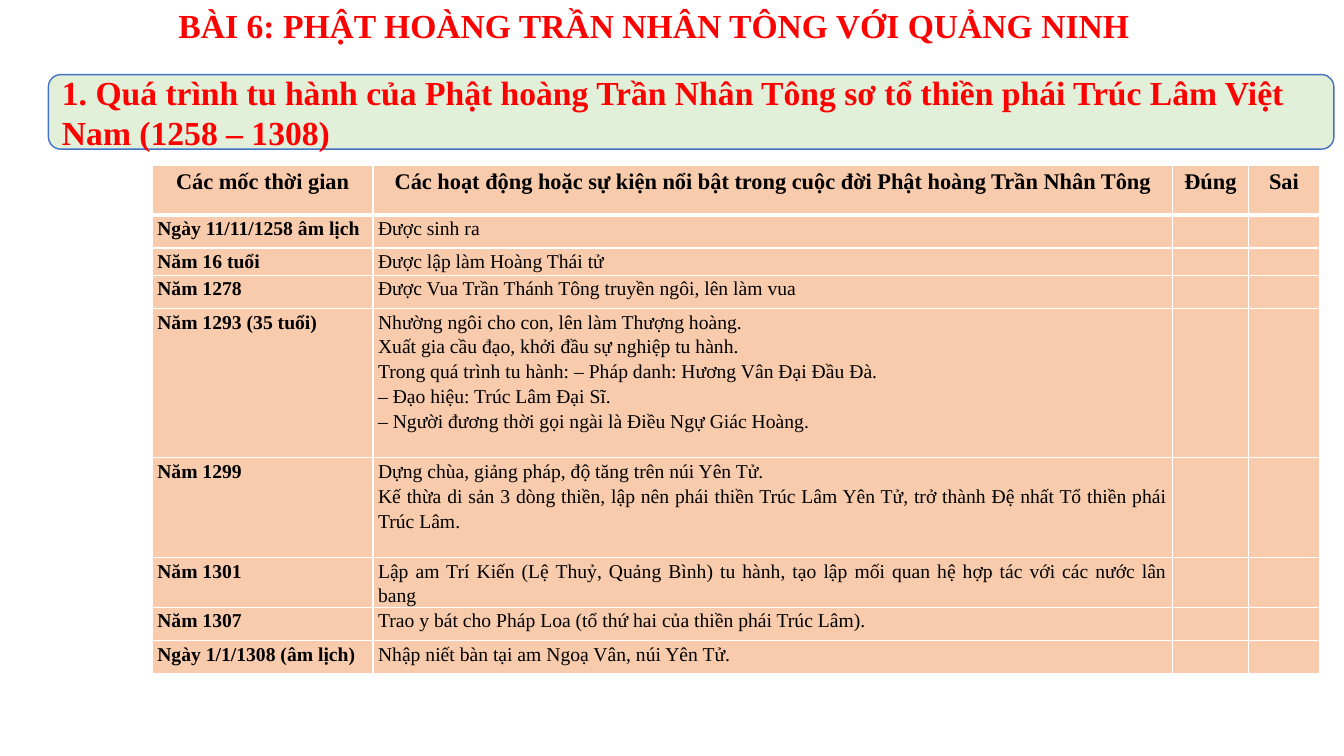
from dataclasses import dataclass

from lxml.etree import SubElement
from pptx import Presentation
from pptx.dml.color import RGBColor
from pptx.enum.shapes import MSO_SHAPE
from pptx.enum.text import MSO_ANCHOR, MSO_AUTO_SIZE, PP_ALIGN
from pptx.oxml.ns import qn
from pptx.util import Inches, Pt


@dataclass(frozen=True)
class Theme:
    """Colours, typeface and type sizes of the slide."""
    font: str = "Times New Roman"
    red: str = "FF0000"
    black: str = "000000"
    white: str = "FFFFFF"
    green: str = "E2F0D9"
    blue: str = "4472C4"
    peach: str = "F8CBAD"
    title: int = 24
    header: int = 16
    body: int = 14
    line_spacing: float = 1.15


THEME = Theme()
TITLE = "BÀI 6: PHẬT HOÀNG TRẦN NHÂN TÔNG VỚI QUẢNG NINH"
SECTION = ("1. Quá trình tu hành của Phật hoàng Trần Nhân Tông "
           "sơ tổ thiền phái Trúc Lâm Việt Nam (1258 – 1308)")
HEADERS = ["Các mốc thời gian",
           "Các hoạt động hoặc sự kiện nổi bật trong cuộc đời Phật hoàng Trần Nhân Tông",
           "Đúng", "Sai"]
EVENTS = [
    ("Ngày 11/11/1258 âm lịch", ["Được sinh ra"]),
    ("Năm 16 tuổi", ["Được lập làm Hoàng Thái tử"]),
    ("Năm 1278", ["Được Vua Trần Thánh Tông truyền ngôi, lên làm vua"]),
    ("Năm 1293 (35 tuổi)", [
        "Nhường ngôi cho con, lên làm Thượng hoàng.",
        "Xuất gia cầu đạo, khởi đầu sự nghiệp tu hành.",
        "Trong quá trình tu hành: – Pháp danh: Hương Vân Đại Đầu Đà.",
        "– Đạo hiệu: Trúc Lâm Đại Sĩ.",
        "– Người đương thời gọi ngài là Điều Ngự Giác Hoàng."]),
    ("Năm 1299", [
        "Dựng chùa, giảng pháp, độ tăng trên núi Yên Tử.",
        "Kế thừa di sản 3 dòng thiền, lập nên phái thiền Trúc Lâm Yên Tử, "
        "trở thành Đệ nhất Tổ thiền phái Trúc Lâm."]),
    ("Năm 1301", ["Lập am Trí Kiến (Lệ Thuỷ, Quảng Bình) tu hành, "
                  "tạo lập mối quan hệ hợp tác với các nước lân bang"]),
    ("Năm 1307", ["Trao y bát cho Pháp Loa (tổ thứ hai của thiền phái Trúc Lâm)."]),
    ("Ngày 1/1/1308 (âm lịch)", ["Nhập niết bàn tại am Ngoạ Vân, núi Yên Tử."]),
]
COLUMN_WIDTHS = [2.19, 7.93, 0.75, 0.71]
ROW_HEIGHTS = [0.49, 0.33, 0.27, 0.33, 1.48, 0.99, 0.49, 0.33, 0.33]


def set_attributes(target, values):
    """Set each named attribute of the target."""
    for name, value in values.items():
        setattr(target, name, value)


def write_text(frame, lines, size, color, bold, alignment, spacing=1.0):
    """Write one formatted paragraph per line into the text frame."""
    for index, line in enumerate(lines):
        paragraph = frame.paragraphs[0] if index == 0 else frame.add_paragraph()
        set_attributes(paragraph, {"alignment": alignment, "line_spacing": spacing,
                                   "space_before": Pt(0)})
        run = paragraph.add_run()
        run.text = line
        set_attributes(run.font, {"name": THEME.font, "size": Pt(size), "bold": bold})
        run.font.color.rgb = RGBColor.from_string(color)


def add_title(slide, left, top, width, height):
    """Place the lesson title in the title placeholder."""
    title = slide.shapes.title
    set_attributes(title, {"left": Inches(left), "top": Inches(top),
                           "width": Inches(width), "height": Inches(height)})
    set_attributes(title.text_frame, {"word_wrap": False, "auto_size": MSO_AUTO_SIZE.NONE,
                                      "vertical_anchor": MSO_ANCHOR.TOP})
    write_text(title.text_frame, [TITLE], THEME.title, THEME.red, True, PP_ALIGN.CENTER)


def add_section_banner(slide, left, top, width, height):
    """Draw the rounded banner with the section heading."""
    banner = slide.shapes.add_shape(MSO_SHAPE.ROUNDED_RECTANGLE, Inches(left), Inches(top),
                                    Inches(width), Inches(height))
    banner.shadow.inherit = False
    banner.fill.solid()
    banner.fill.fore_color.rgb = RGBColor.from_string(THEME.green)
    banner.line.color.rgb = RGBColor.from_string(THEME.blue)
    banner.line.width = Pt(1)
    set_attributes(banner.text_frame, {"word_wrap": True, "vertical_anchor": MSO_ANCHOR.MIDDLE})
    write_text(banner.text_frame, [SECTION], THEME.title, THEME.red, True, PP_ALIGN.LEFT)


def format_cell(cell, row):
    """Give a cell its margins, white borders and fill."""
    set_attributes(cell, {"margin_left": Inches(0.05), "margin_right": Inches(0.05),
                          "margin_top": 0, "margin_bottom": 0})
    properties = cell._tc.get_or_add_tcPr()
    widths = {"a:lnL": 1, "a:lnR": 1, "a:lnT": 3 if row == 1 else 1,
              "a:lnB": 3 if row == 0 else 1}
    for tag, width in widths.items():
        border = SubElement(properties, qn(tag), w=str(Pt(width)))
        fill = SubElement(border, qn("a:solidFill"))
        SubElement(fill, qn("a:srgbClr"), val=THEME.white)
    cell.fill.solid()
    cell.fill.fore_color.rgb = RGBColor.from_string(THEME.peach)


def fill_cell(cell, row, column, lines):
    """Write the lines of a cell, or set the type size of an empty one."""
    format_cell(cell, row)
    if not lines:
        SubElement(cell.text_frame.paragraphs[0]._p, qn("a:endParaRPr"),
                   sz=str(THEME.body * 100))
        return
    header = row == 0
    alignment = PP_ALIGN.CENTER if header else PP_ALIGN.JUSTIFY if column else PP_ALIGN.LEFT
    write_text(cell.text_frame, lines, THEME.header if header else THEME.body, THEME.black,
               header or column == 0, alignment, THEME.line_spacing)


def add_timeline_table(slide, left, top):
    """Build the table of dates and events with its answer columns."""
    rows = [[[text] for text in HEADERS]]
    rows += [[[date], lines, [], []] for date, lines in EVENTS]
    table = slide.shapes.add_table(len(rows), len(HEADERS), Inches(left), Inches(top),
                                   Inches(sum(COLUMN_WIDTHS)), Inches(sum(ROW_HEIGHTS))).table
    for column, width in zip(table.columns, COLUMN_WIDTHS):
        column.width = Inches(width)
    for row, height in zip(table.rows, ROW_HEIGHTS):
        row.height = Inches(height)
    for row, cells in enumerate(rows):
        for column, lines in enumerate(cells):
            fill_cell(table.cell(row, column), row, column, lines)


def main():
    """Build and save the presentation."""
    presentation = Presentation()
    set_attributes(presentation, {"slide_width": Inches(13.33), "slide_height": Inches(7.5)})
    slide = presentation.slides.add_slide(presentation.slide_layouts[5])
    add_title(slide, 1.62, 0, 9.73, 0.5)
    add_section_banner(slide, 0.48, 0.74, 12.75, 0.74)
    add_timeline_table(slide, 1.51, 1.64)
    presentation.save("out.pptx")


if __name__ == "__main__":
    main()
